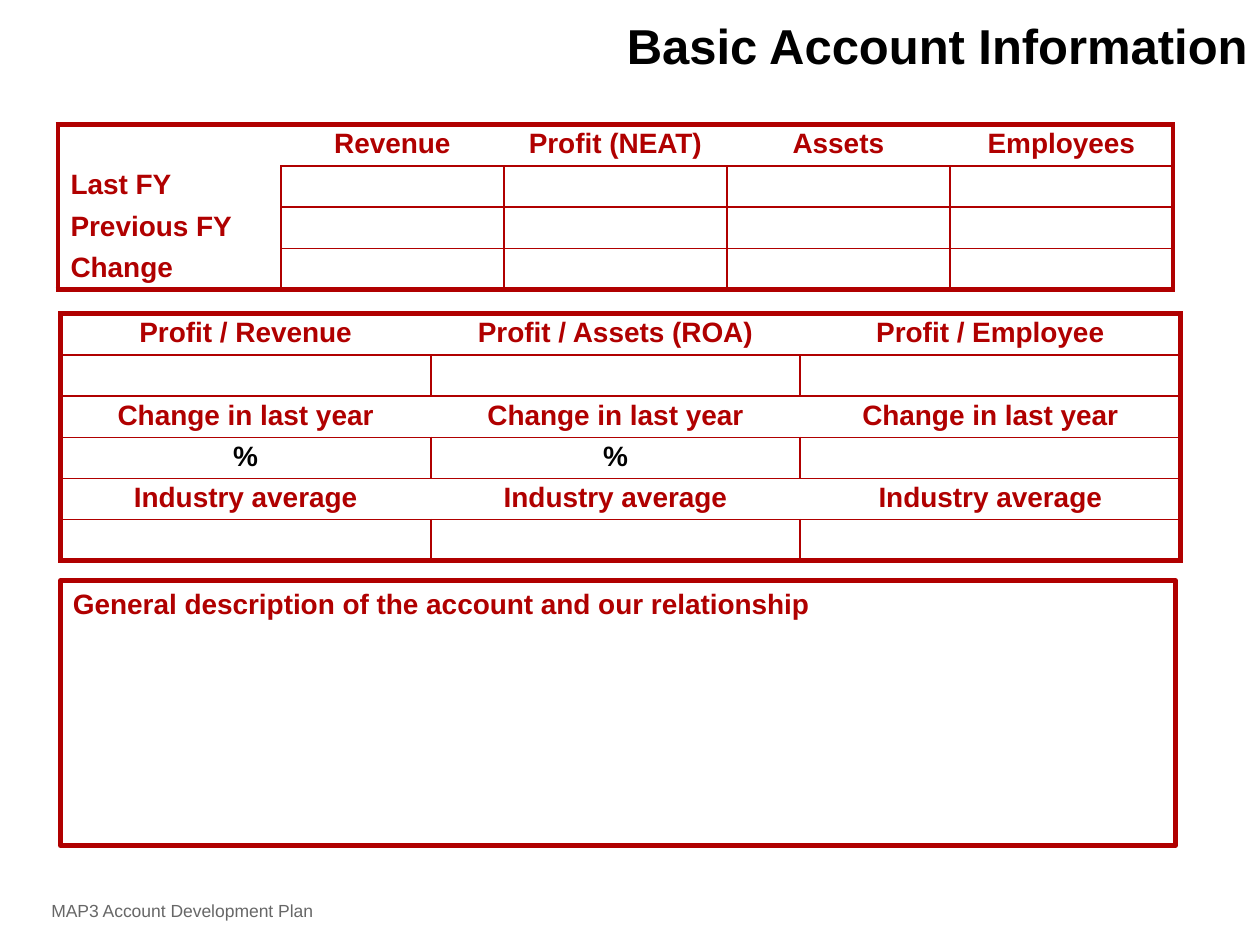
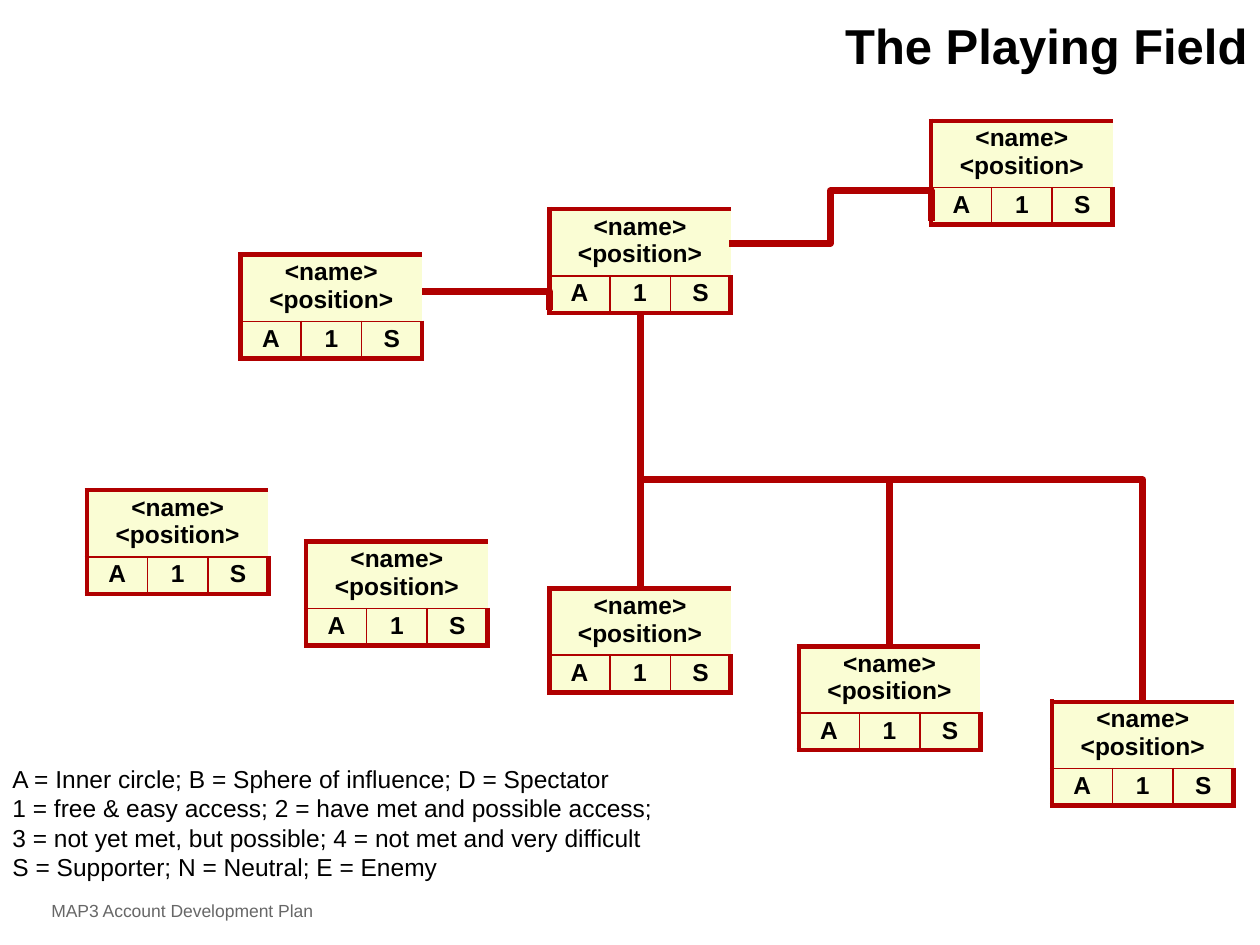
"""Build the two account development plan slides: basic figures and the playing field."""
from lxml import etree
from pptx import Presentation
from pptx.dml import color
from pptx.enum import shapes, text
from pptx.oxml import ns
from pptx.util import Inches, Pt

FONT = "Arial"
RED, BLACK, GREY, CREAM, WHITE = "B00000", "000000", "676767", "FAFDD4", "FFFFFF"
THICK, THIN, ROUTE = 3, 1, 4
LEFT, CENTER, RIGHT = text.PP_ALIGN.LEFT, text.PP_ALIGN.CENTER, text.PP_ALIGN.RIGHT

FOOTER = "MAP3 Account Development Plan"

FIGURES = [
    ["", "Revenue", "Profit (NEAT)", "Assets", "Employees"],
    ["Last FY", "", "", "", ""],
    ["Previous FY", "", "", "", ""],
    ["Change", "", "", "", ""],
]
RATIOS = [
    ["Profit / Revenue", "Profit / Assets (ROA)", "Profit / Employee"],
    ["", "", ""],
    ["Change in last year"] * 3,
    ["%", "%", ""],
    ["Industry average"] * 3,
    ["", "", ""],
]
DESCRIPTION = "General description of the account and our relationship"

CARD = [["<name>\n<position>", "", ""], ["A", "1", "S"]]
CARD_WIDTHS, CARD_HEIGHTS = [0.48] * 3, [0.53, 0.29]
CARD_PLACES = {
    "center": (4.36, 1.66),
    "left": (1.91, 2.02),
    "right": (7.39, 0.96),
    "report 2": (6.34, 5.13),
    "report 1": (4.36, 4.67),
    "lone 2": (2.43, 4.3),
    "report 3": (8.35, 5.57),
    "lone 1": (0.69, 3.89),
}
LEGEND = [
    "A = Inner circle; B = Sphere of influence; D = Spectator",
    "1 = free & easy access; 2 = have met and possible access; "
    "3 = not yet met, but possible; 4 = not met and very difficult",
    "S = Supporter; N = Neutral; E = Enemy",
]
# Each elbow: start, end, preset, rotation, flips, adjustments
ELBOWS = [
    ((7.39, 1.75), (5.79, 1.93), "bentConnector4", 270, "HV", [-1.31, 0.5]),
    ((7.06, 5.13), (5.08, 2.48), "bentConnector3", 90, "H", [0.5]),
    ((9.07, 5.57), (5.08, 2.48), "bentConnector3", 90, "H", [0.57]),
    ((3.35, 2.31), (4.36, 2.46), "bentConnector2", 0, "", []),
]


def rgb(value):
    return color.RGBColor.from_string(value)


def write(frame, lines, size, ink, bold=False, align=LEFT, spacing=None):
    frame.word_wrap = True
    for number, line in enumerate(lines):
        para = frame.add_paragraph() if number else frame.paragraphs[0]
        para.alignment = align
        if spacing:
            para.line_spacing = spacing
        if not line:
            end = etree.SubElement(para._p, ns.qn("a:endParaRPr"))
            end.set("sz", str(size * 100))
            continue
        span = para.add_run()
        span.text = line
        span.font.name, span.font.size, span.font.bold = FONT, Pt(size), bold
        span.font.color.rgb = rgb(ink)


def add_text(page, place, lines, size, ink, **style):
    box = page.shapes.add_textbox(*map(Inches, place))
    box.text_frame.vertical_anchor = text.MSO_ANCHOR.MIDDLE
    write(box.text_frame, lines, size, ink, **style)


def add_page(deck, title):
    page = deck.slides.add_slide(deck.slide_layouts[6])
    add_text(page, (0, 6.95, 2.89, 0.55), [FOOTER], 10, GREY, align=CENTER)
    add_text(page, (0, 0, 10, 0.79), [title], 28, BLACK, bold=True, align=RIGHT, spacing=0.85)
    return page


def set_border(cell, side, weight):
    line = etree.SubElement(cell._tc.get_or_add_tcPr(), ns.qn(f"a:ln{side}"))
    line.set("w", str(Pt(weight)))
    if weight:
        solid = etree.SubElement(line, ns.qn("a:solidFill"))
        etree.SubElement(solid, ns.qn("a:srgbClr")).set("val", RED)
    else:
        etree.SubElement(line, ns.qn("a:noFill"))


def add_grid(page, corner, widths, heights, rows, size, ink, headers, fill=None, stub=False, margin=0.1):
    extent = sum(widths), sum(heights)
    frame = page.shapes.add_table(len(rows), len(widths), *map(Inches, corner + extent))
    grid = frame.table
    grid.first_row = grid.horz_banding = False
    for column, width in zip(grid.columns, widths):
        column.width = Inches(width)
    for row, height in zip(grid.rows, heights):
        row.height = Inches(height)
    last_row, last_col = len(rows) - 1, len(widths) - 1
    for r, values in enumerate(rows):
        upright = 0 if r in headers else THIN
        for c, value in enumerate(values):
            cell = grid.cell(r, c)
            level = 0 if stub and c == 0 else THIN
            set_border(cell, "L", THICK if c == 0 else upright)
            set_border(cell, "R", THICK if c == last_col else upright)
            set_border(cell, "T", THICK if r == 0 else level)
            set_border(cell, "B", THICK if r == last_row else level)
            if fill:
                cell.fill.solid()
                cell.fill.fore_color.rgb = rgb(fill)
            else:
                cell.fill.background()
            cell.margin_left = cell.margin_right = Inches(margin)
            cell.margin_top = cell.margin_bottom = Inches(0.03)
            write(cell.text_frame, value.split("\n"), size, BLACK if value == "%" else ink,
                  bold=True, align=LEFT if stub and c == 0 else CENTER)
    return frame


def add_card(page, corner):
    frame = add_grid(page, corner, CARD_WIDTHS, CARD_HEIGHTS, CARD, 14, BLACK, {0}, CREAM, margin=0.06)
    frame.table.cell(0, 0).merge(frame.table.cell(0, 2))
    return frame


def add_route(page, kind, start, end):
    route = page.shapes.add_connector(kind, *map(Inches, start + end))
    route.line.color.rgb = rgb(RED)
    route.line.width = Pt(ROUTE)
    etree.SubElement(route._element.spPr, ns.qn("a:effectLst"))
    return route


def add_elbow(page, start, end, preset, turn, flips, adjustments):
    route = add_route(page, shapes.MSO_CONNECTOR.ELBOW, start, end)
    width, height = abs(end[0] - start[0]), abs(end[1] - start[1])
    middle_x, middle_y = (start[0] + end[0]) / 2, (start[1] + end[1]) / 2
    if turn:
        width, height = height, width
    route.left, route.top = Inches(middle_x - width / 2), Inches(middle_y - height / 2)
    route.width, route.height = Inches(width), Inches(height)
    frame = route._element.spPr.find(ns.qn("a:xfrm"))
    frame.set("rot", str(turn * 60000))
    for axis in "HV":
        frame.set(f"flip{axis}", str(int(axis in flips)))
    shape = route._element.spPr.find(ns.qn("a:prstGeom"))
    shape.set("prst", preset)
    guides = shape.find(ns.qn("a:avLst"))
    for number, share in enumerate(adjustments, 1):
        guide = etree.SubElement(guides, ns.qn("a:gd"))
        guide.set("name", f"adj{number}")
        guide.set("fmla", f"val {round(share * 100000)}")


def build_account_page(deck):
    page = add_page(deck, "Basic Account Information")
    panel = page.shapes.add_shape(shapes.MSO_SHAPE.RECTANGLE, *map(Inches, (0.48, 4.61, 8.85, 2.1)))
    panel.shadow.inherit = False
    panel.fill.background()
    panel.line.color.rgb = rgb(RED)
    panel.line.width = Pt(THICK)
    panel.text_frame.vertical_anchor = text.MSO_ANCHOR.TOP
    write(panel.text_frame, [DESCRIPTION], 16, RED, bold=True)
    add_grid(page, (0.46, 0.99), [1.77] * 5, [0.325] * 4, FIGURES, 16, RED, {0}, stub=True)
    add_grid(page, (0.48, 2.49), [2.94, 2.93, 3.02], [0.325] * 6, RATIOS, 16, RED, {0, 2, 4})


def build_field_page(deck):
    page = add_page(deck, "The Playing Field")
    cards = {name: add_card(page, corner) for name, corner in CARD_PLACES.items()}
    add_text(page, (0, 6.01, 5.41, 1.04), LEGEND, 14, BLACK)
    stem = add_route(page, shapes.MSO_CONNECTOR.STRAIGHT, (5.08, 4.67), (5.08, 2.48))
    stem.begin_connect(cards["report 1"], 0)
    stem.end_connect(cards["center"], 2)
    for elbow in ELBOWS:
        add_elbow(page, *elbow)


def main():
    deck = Presentation()
    deck.slide_width, deck.slide_height = Inches(10), Inches(7.5)
    build_account_page(deck)
    build_field_page(deck)
    deck.save("out.pptx")


if __name__ == "__main__":
    main()
